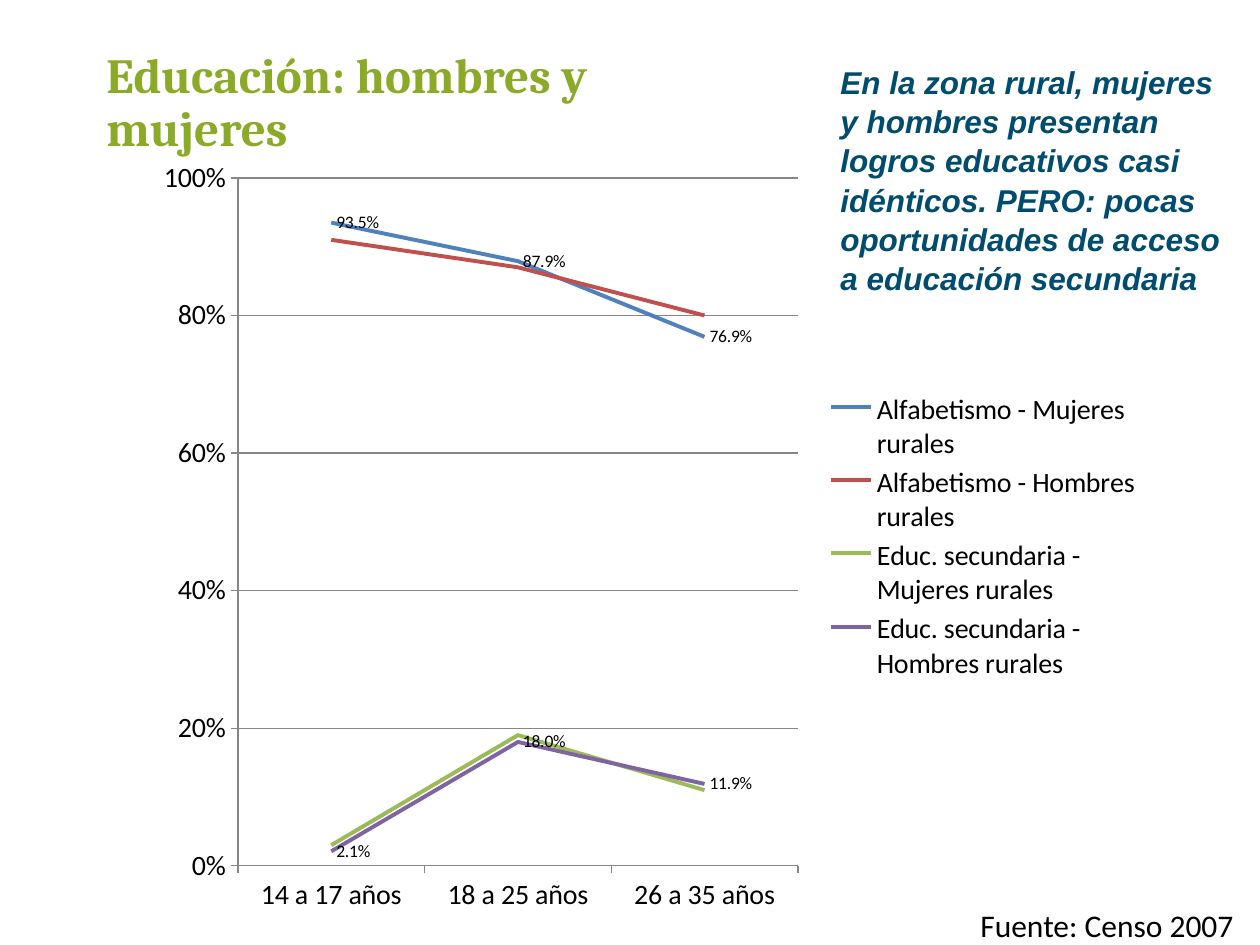
from collections import namedtuple
from dataclasses import dataclass

from lxml import etree
from pptx import Presentation
from pptx.chart.data import CategoryChartData
from pptx.dml.color import RGBColor
from pptx.enum.chart import XL_CHART_TYPE, XL_LABEL_POSITION, XL_LEGEND_POSITION, XL_TICK_MARK
from pptx.oxml.ns import qn
from pptx.util import Emu, Pt

LINE = XL_CHART_TYPE.LINE
LABEL_RIGHT = XL_LABEL_POSITION.RIGHT
LEGEND_RIGHT = XL_LEGEND_POSITION.RIGHT
TICK_OUTSIDE = XL_TICK_MARK.OUTSIDE
BLANK_LAYOUT = 6
EMU_PER_PX = 914400 / 126

Box = namedtuple("Box", "left top width height")
Series = namedtuple("Series", "name values color labelled")


@dataclass(frozen=True)
class Theme:
    title: str = "8BAA27"
    comment: str = "004C6F"
    text: str = "000000"
    rule: str = "868686"
    title_font: str = "Cambria"
    comment_font: str = "Arial"
    body_font: str = "Calibri"
    title_size: int = 28
    text_size: int = 18
    axis_size: int = 16
    label_size: int = 10


THEME = Theme()
CATEGORIES = ["14 a 17 años", "18 a 25 años", "26 a 35 años"]
SERIES = [
    Series("Alfabetismo - Mujeres rurales", (0.935, 0.879, 0.769), "4F81BD", True),
    Series("Alfabetismo - Hombres rurales", (0.91, 0.87, 0.8), "C0504D", False),
    Series("Educ. secundaria - Mujeres rurales", (0.03, 0.19, 0.11), "9BBB59", False),
    Series("Educ. secundaria - Hombres rurales", (0.021, 0.18, 0.119), "8064A2", True),
]


def px(length):
    return Emu(round(length * EMU_PER_PX))


def rgb(color):
    return RGBColor.from_string(color)


def set_all(target, values):
    for name, value in values.items():
        setattr(target, name, value)


def format_font(font, color, **values):
    set_all(font, values)
    font.color.rgb = rgb(color)


def add_text(page, box, text, color, font, para_format=None, wrap=True):
    frame = page.shapes.add_textbox(*map(px, box)).text_frame
    frame.word_wrap = wrap
    para = frame.paragraphs[0]
    set_all(para, para_format or {})
    span = para.add_run()
    span.text = text
    format_font(span.font, color, **font)


def add_title(page, box):
    add_text(page, box, "Educación: hombres y mujeres", THEME.title,
             {"name": THEME.title_font, "size": Pt(THEME.title_size), "bold": True},
             {"line_spacing": 0.9}, wrap=False)


def add_comment(page, box):
    add_text(page, box,
             "En la zona rural, mujeres y hombres presentan logros educativos casi idénticos. "
             "PERO: pocas oportunidades de acceso a educación secundaria", THEME.comment,
             {"name": THEME.comment_font, "size": Pt(THEME.text_size),
              "bold": True, "italic": True},
             {"line_spacing": 1.04})


def add_source_note(page, box):
    add_text(page, box, "Fuente: Censo 2007", THEME.text,
             {"name": THEME.body_font, "size": Pt(THEME.text_size)})


def place_in_chart(parent, index, area, box, inner=False):
    """Fix a chart part at an area given in px from the chart's corner."""
    for old in parent.findall(qn("c:layout")):
        parent.remove(old)
    layout = etree.Element(qn("c:layout"))
    parent.insert(index, layout)
    manual = etree.SubElement(layout, qn("c:manualLayout"))
    values = {"layoutTarget": "inner"} if inner else {}
    values |= {
        "xMode": "edge",
        "yMode": "edge",
        "x": area.left / box.width,
        "y": area.top / box.height,
        "w": area.width / box.width,
        "h": area.height / box.height,
    }
    for name, value in values.items():
        etree.SubElement(manual, qn(f"c:{name}")).set("val", str(value))


def format_axes(chart):
    for axis in (chart.category_axis, chart.value_axis):
        axis.major_tick_mark = TICK_OUTSIDE
        axis.format.line.color.rgb = rgb(THEME.rule)
        axis.tick_labels.font.size = Pt(THEME.axis_size)
    axis = chart.value_axis
    set_all(axis, {"minimum_scale": 0, "maximum_scale": 1, "major_unit": 0.2,
                   "has_major_gridlines": True})
    axis.major_gridlines.format.line.color.rgb = rgb(THEME.rule)
    set_all(axis.tick_labels, {"number_format": "0%", "number_format_is_linked": False})


def format_series(line, series):
    line.smooth = False
    line.format.line.color.rgb = rgb(series.color)
    line.format.line.width = Pt(2.25)
    if series.labelled:
        set_all(line.data_labels, {
            "show_value": True,
            "number_format": "####.0%",
            "number_format_is_linked": False,
            "position": LABEL_RIGHT,
        })


def add_education_chart(page, box):
    data = CategoryChartData(number_format="0.0%")
    data.categories = CATEGORIES
    for series in SERIES:
        data.add_series(series.name, series.values)
    chart = page.shapes.add_chart(LINE, *map(px, box), data).chart
    set_all(chart, {"has_title": False, "has_legend": True})
    format_font(chart.font, THEME.text, name=THEME.body_font, size=Pt(THEME.label_size))

    plot = chart.plots[0]
    plot.vary_by_categories = False
    for line, series in zip(plot.series, SERIES):
        format_series(line, series)
    format_axes(chart)

    legend = chart.legend
    set_all(legend, {"position": LEGEND_RIGHT, "include_in_layout": False})
    legend.font.size = Pt(THEME.axis_size)
    plot_area = chart._chartSpace.chart.plotArea
    place_in_chart(plot_area, 0, Box(94, 33, 560, 688), box, inner=True)
    place_in_chart(legend._element, 1, Box(678, 243, 322, 298), box)


def main():
    deck = Presentation()
    deck.slide_width, deck.slide_height = px(1260), px(945)
    page = deck.slides.add_slide(deck.slide_layouts[BLANK_LAYOUT])
    add_comment(page, Box(828, 55, 417, 165))
    add_education_chart(page, Box(144, 145, 1007, 784))
    add_title(page, Box(94, 45, 697, 67))
    add_source_note(page, Box(968, 900, 292, 50))
    deck.save("out.pptx")


if __name__ == "__main__":
    main()
